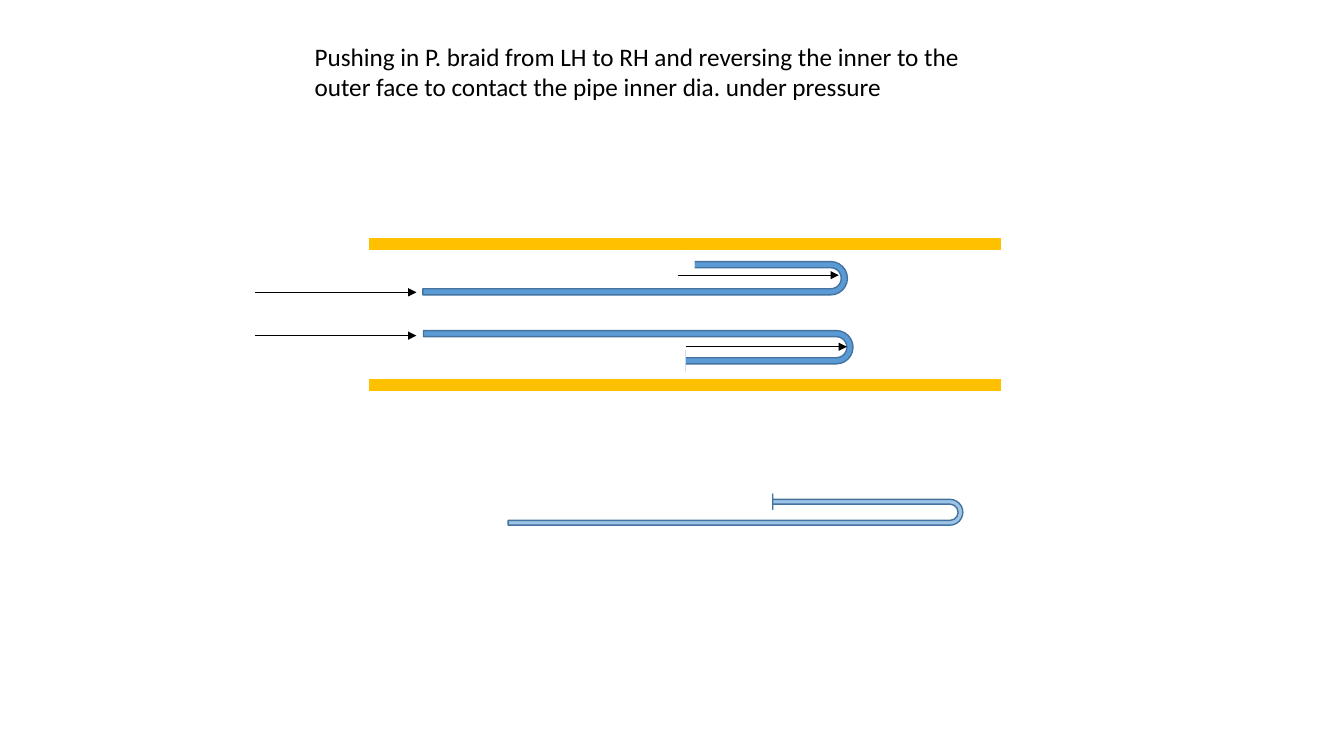
from pptx import Presentation
from pptx import util as u
from pptx.dml.color import RGBColor
from pptx.enum import shapes, text
from pptx.oxml.ns import qn
from lxml import etree

PX = 9144  # EMU per px, 100 px to the inch
GOLD, BLUE, PALE, EDGE = "FFC000", "5B9BD5", "9DC3E6", "43739E"
BLACK, WHITE = "000000", "FFFFFF"


def px(*nums):
    return [u.Emu(n * PX) for n in nums]


def color(code):
    return RGBColor.from_string(code)


def write(frame, words, size=18, font="Calibri", ink=BLACK):
    frame.word_wrap = True
    frame.auto_size = text.MSO_AUTO_SIZE.SHAPE_TO_FIT_TEXT
    frame.vertical_anchor = text.MSO_ANCHOR.TOP
    para = frame.paragraphs[0]
    para.alignment = text.PP_ALIGN.LEFT
    run = para.add_run()
    run.text = words
    run.font.size, run.font.name = u.Pt(size), font
    run.font.color.rgb = color(ink)


class Board:
    def __init__(self, deck):
        self.slide = deck.slides.add_slide(deck.slide_layouts[5])
        self.tree = self.slide.shapes

    def title(self, words, box):
        head = self.tree.title
        head.left, head.top, head.width, head.height = px(*box)
        write(head.text_frame, words)

    def line(self, x1, x2, y, ink=BLACK, width=0.5, arrow=False):
        link = self.tree.add_connector(
            shapes.MSO_CONNECTOR.STRAIGHT, *px(x1, y, x2, y))
        link.line.color.rgb = color(ink)
        link.line.width = u.Pt(width)
        props = link._element.spPr
        if arrow:
            tail = etree.SubElement(props.get_or_add_ln(), qn("a:tailEnd"))
            tail.set("type", "triangle")
        etree.SubElement(props, qn("a:effectLst"))

    def shape(self, kind, box, fill, edge=None):
        item = self.tree.add_shape(kind, *px(*box))
        item.shadow.inherit = False
        item.fill.solid()
        item.fill.fore_color.rgb = color(fill)
        if edge:
            item.line.color.rgb = color(edge)
            item.line.width = u.Pt(1)
        else:
            item.line.fill.background()
        return item

    def braid(self, box, fill, head, flip=False):
        turn = self.shape(shapes.MSO_SHAPE.U_TURN_ARROW, box, fill, EDGE)
        turn.rotation = 90
        for i, ratio in enumerate((0.152, 0.25, head, 0.438, 0.418)):
            turn.adjustments[i] = ratio
        if flip:
            turn._element.spPr.xfrm.set("flipH", "1")


def main():
    deck = Presentation()
    deck.slide_width, deck.slide_height = px(1333, 750)
    board = Board(deck)
    board.title("Pushing in P. braid from LH to RH and reversing the inner to "
                "the outer face to contact the pipe inner dia. under pressure",
                (302, 36, 700, 71))

    # Pipe walls
    for y in (242, 382):
        board.line(366, 993, y, GOLD, 8.25)

    # Braid inside the pipe
    board.braid((613, 135, 40, 426), BLUE, 0.287)
    board.braid((610, 62, 40, 421), BLUE, 0.287, flip=True)

    # White covers over the braid tips
    for box in ((662, 347, 18, 23), (656, 252, 33, 29)):
        board.shape(shapes.MSO_SHAPE.RECTANGLE, box, WHITE)

    # Push arrows, all of one length
    for x, y in ((253, 333), (253, 290), (680, 344), (672, 273)):
        board.line(x, x + 160, y, arrow=True)

    # Single braid below the pipe
    board.braid((714, 280, 31, 451), PALE, 0, flip=True)

    deck.save("out.pptx")


if __name__ == "__main__":
    main()
